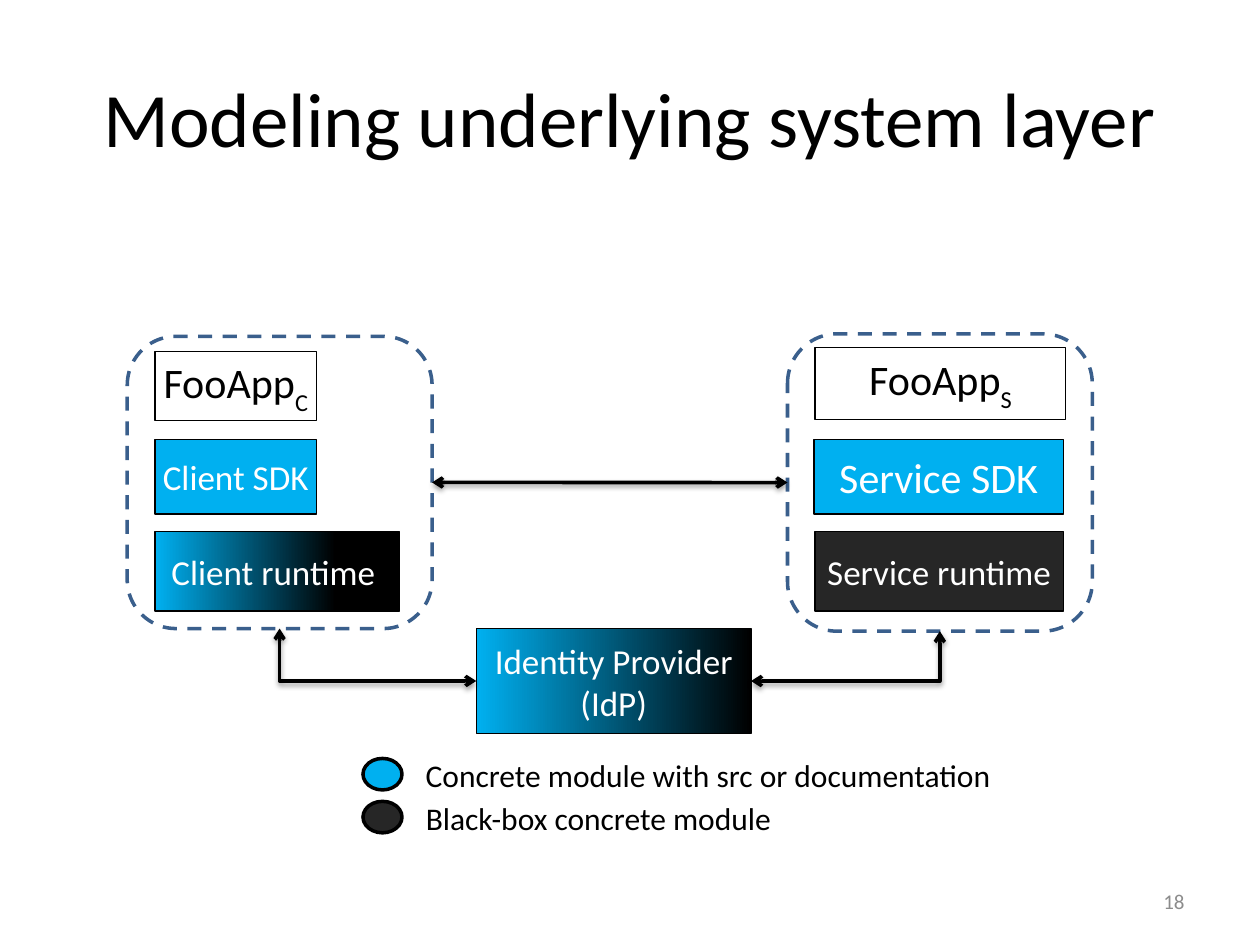
from dataclasses import dataclass
from typing import Optional

from lxml import etree
from pptx import Presentation
from pptx.dml.color import RGBColor
from pptx.enum.dml import MSO_LINE
from pptx.enum.shapes import MSO_CONNECTOR, MSO_SHAPE
from pptx.enum.text import MSO_ANCHOR, PP_ALIGN
from pptx.oxml.ns import qn
from pptx.util import Pt

RECTANGLE, ROUNDED, OVAL = MSO_SHAPE.RECTANGLE, MSO_SHAPE.ROUNDED_RECTANGLE, MSO_SHAPE.OVAL
STRAIGHT, ELBOW = MSO_CONNECTOR.STRAIGHT, MSO_CONNECTOR.ELBOW
LEFT, CENTER, RIGHT = PP_ALIGN.LEFT, PP_ALIGN.CENTER, PP_ALIGN.RIGHT
MIDDLE, TOP = MSO_ANCHOR.MIDDLE, MSO_ANCHOR.TOP
BOTTOM_SITE, LEFT_SITE, RIGHT_SITE = 2, 1, 3


@dataclass(frozen=True)
class Theme:
    font: str = "Calibri"
    ink: str = "000000"
    paper: str = "FFFFFF"
    concrete: str = "00B0F0"
    black_box: str = "262626"
    panel_edge: str = "3A5F8C"
    muted: str = "8C8C8C"
    title_size: float = 44
    app_size: float = 24
    module_size: float = 20
    legend_size: float = 18
    number_size: float = 12
    thin: float = 0.75
    thick: float = 2


THEME = Theme()


@dataclass(frozen=True)
class Frame:
    left: float
    top: float
    width: float
    height: float

    def lengths(self) -> tuple:
        return Pt(self.left), Pt(self.top), Pt(self.width), Pt(self.height)


@dataclass(frozen=True)
class Module:
    frame: Frame
    text: str
    fill: Optional[str] = None
    fade_end: Optional[float] = None  # where a fade to black is complete
    size: float = THEME.module_size
    subscript: str = ""


def format_para(para, size: float, color: str, align) -> None:
    para.alignment = align
    for span in para.runs:
        span.font.name = THEME.font
        span.font.size = Pt(size)
        span.font.color.rgb = RGBColor.from_string(color)


def add_outline(page, kind, frame: Frame, color: str, width: float, fill: Optional[str] = None):
    shape = page.shapes.add_shape(kind, *frame.lengths())
    shape.shadow.inherit = False
    shape.line.color.rgb = RGBColor.from_string(color)
    shape.line.width = Pt(width)
    if fill:
        shape.fill.solid()
        shape.fill.fore_color.rgb = RGBColor.from_string(fill)
    else:
        shape.fill.background()
    return shape


def add_panel(page, frame: Frame):
    panel = add_outline(page, ROUNDED, frame, THEME.panel_edge, THEME.thick)
    panel.line.dash_style = MSO_LINE.DASH
    return panel


def add_module(page, module: Module):
    box = add_outline(page, RECTANGLE, module.frame, THEME.ink, THEME.thin, module.fill)
    if module.fade_end is not None:
        box.fill.gradient()
        box.fill.gradient_angle = 0
        stops = ((0, module.fill), (module.fade_end, THEME.ink))
        for stop, (position, color) in zip(box.fill.gradient_stops, stops):
            stop.position = position
            stop.color.rgb = RGBColor.from_string(color)
    frame = box.text_frame
    frame.margin_left = frame.margin_right = frame.margin_top = frame.margin_bottom = 0
    frame.word_wrap = True
    frame.vertical_anchor = MIDDLE
    frame.text = module.text
    para = frame.paragraphs[0]
    if module.subscript:
        span = para.add_run()
        span.text = module.subscript
        span._r.get_or_add_rPr().set("baseline", "-30000")
    format_para(para, module.size, THEME.paper if module.fill else THEME.ink, CENTER)
    return box


def add_label(page, frame: Frame, text: str, size: float, color: str, align, anchor, wrap: bool) -> None:
    box = page.shapes.add_textbox(*frame.lengths())
    box.text_frame.word_wrap = wrap
    box.text_frame.vertical_anchor = anchor
    box.text_frame.text = text
    format_para(box.text_frame.paragraphs[0], size, color, align)


def add_link(page, kind, start, start_site: int, end, end_site: int) -> None:
    """Join two shapes with a double-headed, softly shadowed arrow."""
    link = page.shapes.add_connector(kind, 0, 0, 0, 0)
    link.begin_connect(start, start_site)
    link.end_connect(end, end_site)
    link.line.color.rgb = RGBColor.from_string(THEME.ink)
    link.line.width = Pt(THEME.thick)
    properties = link._element.spPr
    if kind == ELBOW:  # a single bend
        properties.find(qn("a:prstGeom")).set("prst", "bentConnector2")
    line = properties.find(qn("a:ln"))
    for tag in ("a:headEnd", "a:tailEnd"):
        etree.SubElement(line, qn(tag), type="arrow")
    effects = etree.SubElement(properties, qn("a:effectLst"))
    shadow = etree.SubElement(effects, qn("a:outerShdw"), blurRad=str(Pt(3.1)),
                              dist=str(Pt(1.6)), dir="5400000", rotWithShape="0")
    color = etree.SubElement(shadow, qn("a:srgbClr"), val=THEME.ink)
    etree.SubElement(color, qn("a:alpha"), val="38000")


CLIENT_LEFT, SERVICE_LEFT = 88.6, 465.8
SDK_TOP, RUNTIME_TOP = 251.3, 303.8
SDK_HEIGHT, RUNTIME_HEIGHT = 42.5, 45.4

MODULES = (
    Module(Frame(CLIENT_LEFT, 200.9, 92.2, 39.6), "FooApp", size=THEME.app_size, subscript="C"),
    Module(Frame(CLIENT_LEFT, SDK_TOP, 92.2, SDK_HEIGHT), "Client SDK", THEME.concrete),
    Module(Frame(CLIENT_LEFT, RUNTIME_TOP, 139.7, RUNTIME_HEIGHT), "Client runtime ",
           THEME.concrete, fade_end=0.74),
    Module(Frame(SERVICE_LEFT, 198.7, 143.3, 41), "FooApp", size=THEME.app_size, subscript="S"),
    Module(Frame(465.1, SDK_TOP, 142.6, SDK_HEIGHT), "Service SDK", THEME.concrete,
           size=THEME.app_size),
    Module(Frame(SERVICE_LEFT, RUNTIME_TOP, 141.8, RUNTIME_HEIGHT), "Service runtime",
           THEME.black_box),
)
PROVIDER = Module(Frame(272.2, 359.3, 157, 59.8), "Identity Provider (IdP)",
                  THEME.concrete, fade_end=1)
LEGEND = (
    ("Concrete module with src or documentation", THEME.concrete, 341.3),
    ("Black-box concrete module", THEME.black_box, 215.3),
)
LEGEND_TOP, LEGEND_STEP = 428.4, 24.5


def main() -> None:
    deck = Presentation()
    deck.slide_width, deck.slide_height = Pt(720), Pt(540)
    page = deck.slides.add_slide(deck.slide_layouts[5])

    # Title and page number
    title = page.shapes.title
    title.left, title.top, title.width, title.height = Frame(36, 21.6, 648, 90).lengths()
    title.text_frame.text = "Modeling underlying system layer"
    title.text_frame.vertical_anchor = MIDDLE
    format_para(title.text_frame.paragraphs[0], THEME.title_size, THEME.ink, CENTER)
    add_label(page, Frame(516.2, 500.4, 167.8, 28.8), "18", THEME.number_size,
              THEME.muted, RIGHT, MIDDLE, True)

    # Client and service stacks around the identity provider
    service = add_panel(page, Frame(450, 190.8, 174.2, 169.9))
    client = add_panel(page, Frame(72.7, 192.2, 174.2, 167))
    for module in MODULES:
        add_module(page, module)
    provider = add_module(page, PROVIDER)

    # Links
    add_link(page, STRAIGHT, client, RIGHT_SITE, service, LEFT_SITE)
    add_link(page, ELBOW, provider, LEFT_SITE, client, BOTTOM_SITE)
    add_link(page, ELBOW, provider, RIGHT_SITE, service, BOTTOM_SITE)

    # Legend
    for row, (text, color, width) in enumerate(LEGEND):
        top = LEGEND_TOP + row * LEGEND_STEP
        add_outline(page, OVAL, Frame(207.4, top + 5, 22.3, 18), THEME.ink, THEME.thick, color)
        add_label(page, Frame(236.2, top, width, 28.8), text, THEME.legend_size,
                  THEME.ink, LEFT, TOP, False)

    deck.save("out.pptx")


if __name__ == "__main__":
    main()
